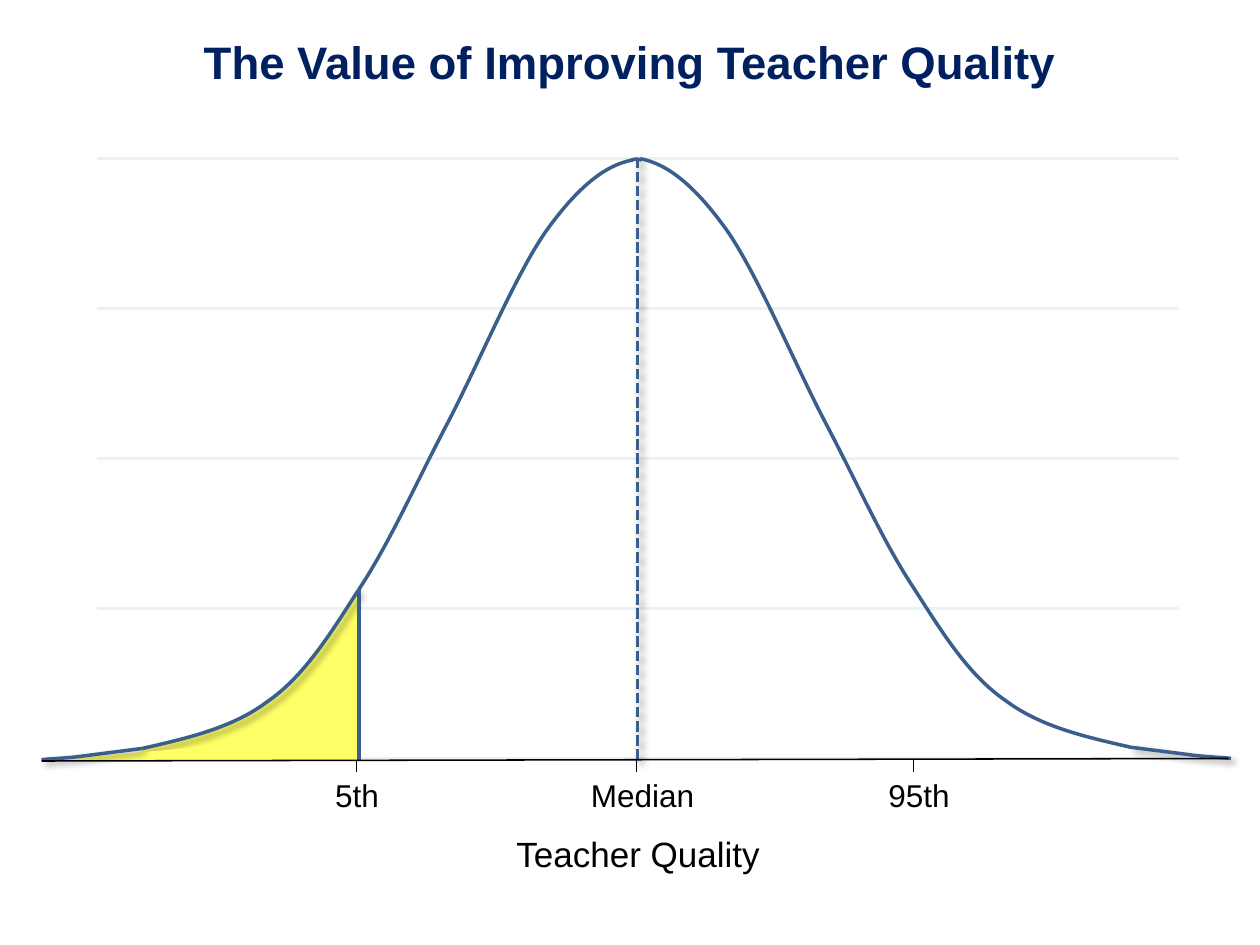
import pptx
import pptx.dml.color
import pptx.enum.dml
import pptx.enum.shapes
import pptx.enum.text
import pptx.util
from lxml import etree
from pptx.oxml.ns import qn

COLORS = {"title": "002060", "text": "000000", "axis": "000000", "grid": "EAF2F3",
          "curve": "3A5F8C", "area": "FFFF66", "shadow": "000000"}
FONT = "Arial"
WIDTH, HEIGHT = 10, 7.5
CENTER = 5.05          # axis of symmetry of the bell
RISE = 0.01            # the right half sits slightly higher
BASE = 6.03            # height of the horizontal axis
GRID_LEFT, GRID_RIGHT, GRID_TOP, GRID_STEP, GRID_ROWS = 0.77, 9.36, 1.26, 1.19, 5

TITLE = "The Value of Improving Teacher Quality"
AXIS_TITLE = "Teacher Quality"
# label, tick position, left and width of the label
TICKS = [("5th", 2.83, 2.66, 0.35), ("Median", 5.05, 4.69, 0.83), ("95th", 7.25, 7.05, 0.49)]

# Outlines: a start, then segments of one point (line) or three points (cubic curve)
TAIL = [[(1.13, 5.94)], [(0.66, 6)], [(0.52, 6.02), (0.39, 6.02), (0.33, 6.03)]]
SHOULDER = [[(1.13, 5.94)], [(1.48, 5.86), (1.84, 5.78), (2.12, 5.57)],
            [(2.41, 5.37), (2.61, 5.05), (2.84, 4.69)]]
FLANK = [[(2.84, 4.69)], [(3.08, 4.33), (3.28, 3.88), (3.53, 3.4)],
         [(3.78, 2.93), (4.08, 2.2), (4.33, 1.84)],
         [(4.58, 1.49), (4.8, 1.31), (5.02, 1.27)]]
CAP = [[(5.01, 1.27)], [(5.05, 1.26), (5.07, 1.26), (5.09, 1.27)]]
# Shaded area under the tail, below the 5th percentile
UPPER_AREA = [[(2.84, 4.68)], [(2.86, 6.02)], [(1.12, 6.02)],
              [(1.12, 5.98), (1.12, 5.97), (1.12, 5.94)], [(1.4, 5.88)],
              [(1.56, 5.83), (1.73, 5.78), (1.88, 5.72)], [(2.16, 5.55)],
              [(2.37, 5.34)], [(2.71, 4.89)], [(2.84, 4.68)]]
LOWER_AREA = [[(2.8, 5.6)], [(2.83, 6.03)], [(0.5, 6.03)],
              [(0.5, 6.02), (0.5, 6.02), (0.5, 6)], [(0.88, 5.99)],
              [(1.09, 5.97), (1.32, 5.96), (1.52, 5.93)], [(1.89, 5.88)],
              [(2.18, 5.82)], [(2.63, 5.67)], [(2.8, 5.6)]]

inch = pptx.util.Inches


def rgb(name):
    return pptx.dml.color.RGBColor.from_string(COLORS[name])


def mirror(outline):
    return [[(2 * CENTER - x, y - RISE) for x, y in segment] for segment in outline]


def set_effects(shape, shadow):
    effects = etree.SubElement(shape._element.spPr, qn("a:effectLst"))
    if shadow:
        outer = etree.SubElement(effects, qn("a:outerShdw"), blurRad="50800", dist="38100",
                                 dir="2700000", algn="tl", rotWithShape="0")
        color = etree.SubElement(outer, qn("a:srgbClr"), val=COLORS["shadow"])
        etree.SubElement(color, qn("a:alpha"), val="40000")


def add_line(page, start, end, color, width, dashed=False, shadow=False):
    line = page.shapes.add_connector(pptx.enum.shapes.MSO_CONNECTOR.STRAIGHT,
                                     *map(inch, start + end))
    line.line.color.rgb = rgb(color)
    line.line.width = pptx.util.Pt(width)
    if dashed:
        line.line.dash_style = pptx.enum.dml.MSO_LINE.SQUARE_DOT
    set_effects(line, shadow)


def bend(shape, segments):
    """Join the three line steps of each cubic segment into one curve step."""
    steps = iter(list(shape._element.iter(qn("a:lnTo"))))
    for segment in segments:
        first, *others = [next(steps) for _ in segment]
        if others:
            first.tag = qn("a:cubicBezTo")
            for step in others:
                first.append(step[0])
                step.getparent().remove(step)


def add_outline(page, outline, filled=False, shadow=False):
    start, *points = [(inch(x), inch(y)) for segment in outline for x, y in segment]
    builder = page.shapes.build_freeform(*start)
    builder.add_line_segments(points, close=filled)
    shape = builder.convert_to_shape()
    bend(shape, outline[1:])
    if filled:
        shape.fill.solid()
        shape.fill.fore_color.rgb = rgb("area")
        shape.line.fill.background()
    else:
        shape.fill.background()
        shape.line.color.rgb = rgb("curve")
        shape.line.width = pptx.util.Pt(2)
    set_effects(shape, shadow)


def write(box, text, size, color="text", bold=False, centered=True):
    box.text_frame.text = text
    para = box.text_frame.paragraphs[0]
    align = pptx.enum.text.PP_ALIGN
    para.alignment = align.CENTER if centered else align.LEFT
    font = para.runs[0].font
    font.name, font.size, font.bold = FONT, pptx.util.Pt(size), bold
    font.color.rgb = rgb(color)


def add_label(page, text, left, top, width, height, size, wrap):
    box = page.shapes.add_textbox(*map(inch, (left, top, width, height)))
    frame = box.text_frame
    frame.margin_left = frame.margin_right = frame.margin_top = frame.margin_bottom = 0
    frame.word_wrap = wrap
    write(box, text, size, centered=wrap)


def main():
    deck = pptx.Presentation()
    deck.slide_width, deck.slide_height = inch(WIDTH), inch(HEIGHT)
    page = deck.slides.add_slide(deck.slide_layouts[5])

    # Title
    title = page.shapes.title
    title.left, title.top, title.width, title.height = map(inch, (0, 0.22, WIDTH, 0.54))
    write(title, TITLE, 26, "title", bold=True)
    title.text_frame.vertical_anchor = pptx.enum.text.MSO_ANCHOR.MIDDLE

    # Grid, median and ticks
    for row in range(GRID_ROWS):
        y = GRID_TOP + row * GRID_STEP
        add_line(page, (GRID_LEFT, y), (GRID_RIGHT, y), "grid", 1.75)
    add_line(page, (5.06, 1.25), (5.06, BASE), "curve", 2, dashed=True, shadow=True)
    for label, x, left, width in TICKS:
        add_line(page, (x, BASE), (x, BASE + 0.1), "axis", 0.88)
        add_label(page, label, left, 6.16, width, 0.3, 18, wrap=False)
    add_label(page, AXIS_TITLE, 0.92, 6.61, 8.29, 0.34, 20, wrap=True)

    # Bell curve and shaded area
    add_outline(page, FLANK)
    add_outline(page, mirror(SHOULDER + FLANK[1:]))
    add_outline(page, CAP)
    add_outline(page, UPPER_AREA, filled=True)
    add_outline(page, SHOULDER, shadow=True)
    add_line(page, (2.85, 6.04), (2.85, 4.68), "curve", 2)
    add_outline(page, LOWER_AREA, filled=True)
    for tail in (TAIL, mirror(TAIL)):
        add_outline(page, tail, shadow=True)

    # Horizontal axis
    add_line(page, (0.33, 6.04), (9.75, 6.02), "axis", 0.88)
    deck.save("out.pptx")


if __name__ == "__main__":
    main()
